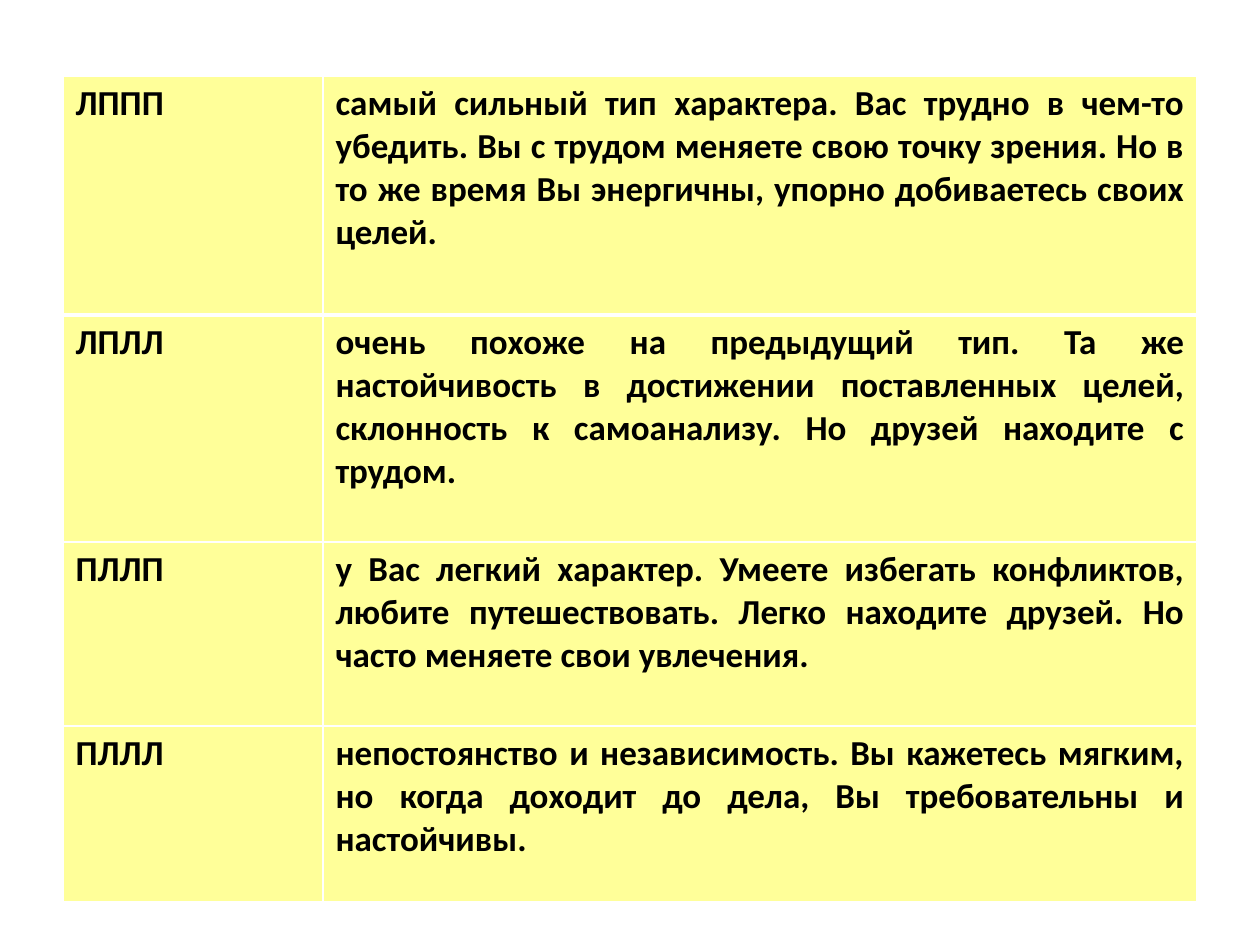
from lxml.etree import SubElement
from pptx import Presentation
from pptx.dml.color import RGBColor
from pptx.enum.text import PP_ALIGN as Align
from pptx.oxml.ns import qn
from pptx.util import Emu, Pt

TYPES = [
    ("ЛППП", "самый сильный тип характера. Вас трудно в чем-то убедить. Вы с трудом меняете "
             "свою точку зрения. Но в то же время Вы энергичны, упорно добиваетесь своих целей."),
    ("ЛПЛЛ", "очень похоже на предыдущий тип. Та же настойчивость в достижении поставленных "
             "целей, склонность к самоанализу. Но друзей находите с трудом."),
    ("ПЛЛП", "у Вас легкий характер. Умеете избегать конфликтов, любите путешествовать. "
             "Легко находите друзей. Но часто меняете свои увлечения."),
    ("ПЛЛЛ", "непостоянство и независимость. Вы кажетесь мягким, но когда доходит до дела, "
             "Вы требовательны и настойчивы."),
]
COLUMN_WIDTHS = [260, 874]
ROW_HEIGHTS = [239, 227, 184, 176]
LEFT, TOP = 63, 76
YELLOW, WHITE, BLACK = "FFFF99", "FFFFFF", "000000"


def px(length):
    return Emu(round(length * 914400 / 126))


def color(value):
    return RGBColor.from_string(value)


def write(cell, text, size=20, font="Calibri", ink=BLACK, bold=True, align=Align.JUSTIFY):
    para = cell.text_frame.paragraphs[0]
    para.alignment = align
    span = para.add_run()
    span.text = text
    span.font.size = Pt(size)
    span.font.name = font
    span.font.bold = bold
    span.font.color.rgb = color(ink)


def draw_borders(cell, widths):
    properties = cell._tc.get_or_add_tcPr()
    for index, (side, width) in enumerate(widths.items()):
        line = properties.makeelement(qn(f"a:{side}"), {"w": str(Pt(width))})
        fill = SubElement(line, qn("a:solidFill"))
        SubElement(fill, qn("a:srgbClr"), val=WHITE)
        properties.insert(index, line)


def main():
    deck = Presentation()
    deck.slide_width, deck.slide_height = px(1260), px(945)
    page = deck.slides.add_slide(deck.slide_layouts[6])
    table = page.shapes.add_table(
        len(TYPES), len(COLUMN_WIDTHS), px(LEFT), px(TOP),
        px(sum(COLUMN_WIDTHS)), px(sum(ROW_HEIGHTS))).table
    table.horz_banding = False
    for column, width in zip(table.columns, COLUMN_WIDTHS):
        column.width = px(width)
    for row_index, (row, height, texts) in enumerate(zip(table.rows, ROW_HEIGHTS, TYPES)):
        row.height = px(height)
        top = 3 if row_index == 1 else 1
        bottom = 3 if row_index == 0 else 1
        for cell, text in zip(row.cells, texts):
            write(cell, text)
            cell.fill.solid()
            cell.fill.fore_color.rgb = color(YELLOW)
            draw_borders(cell, {"lnL": 1, "lnR": 1, "lnT": top, "lnB": bottom})
    deck.save("out.pptx")


if __name__ == "__main__":
    main()
